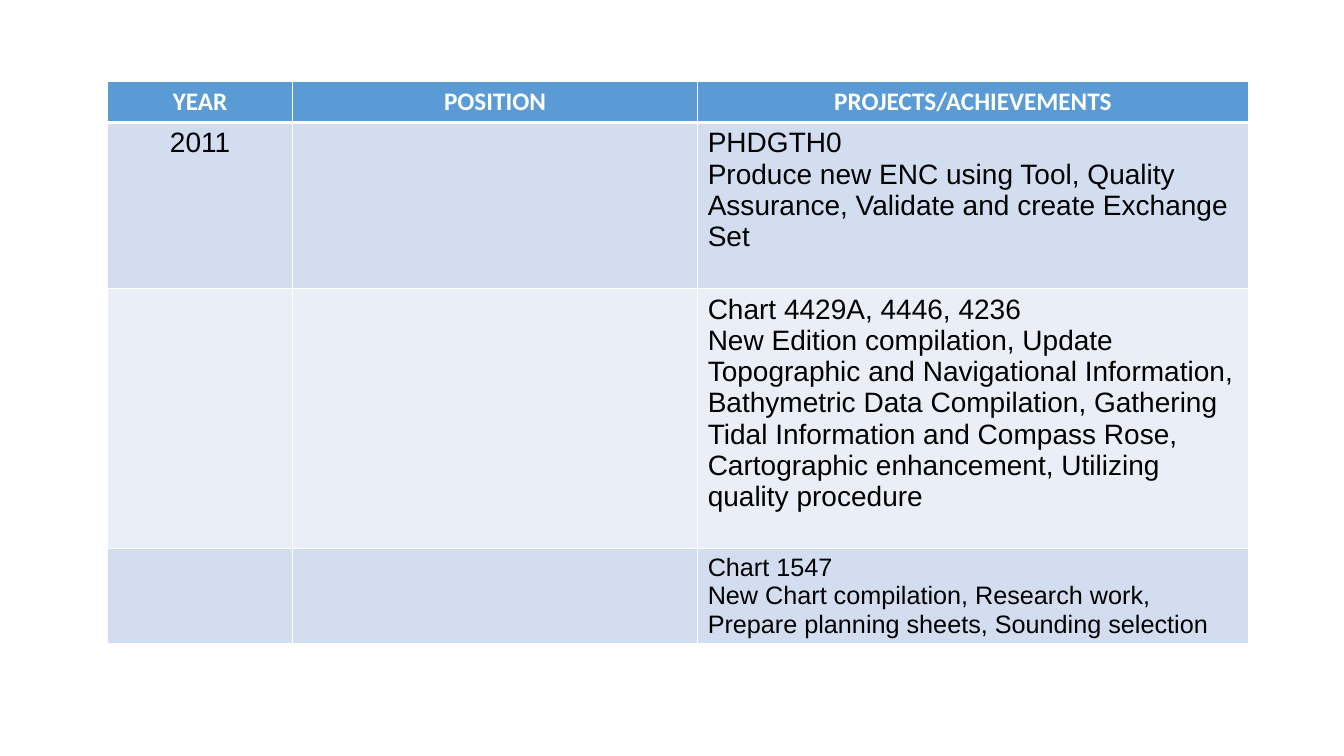
from lxml import etree
from pptx import Presentation
from pptx.dml.color import RGBColor
from pptx.enum.text import PP_ALIGN
from pptx.oxml.ns import qn
from pptx.util import Inches, Pt

CENTER, LEFT = PP_ALIGN.CENTER, PP_ALIGN.LEFT
WHITE, BLACK = "FFFFFF", "000000"
HEADER_BLUE, BAND_DARK, BAND_LIGHT = "5B9BD5", "D2DEEF", "EAEFF7"

COLUMN_WIDTHS = [1.83, 4.02, 5.46]
ROW_HEIGHTS = [0.4, 1.65, 2.58, 0.93]
TABLE_LEFT, TABLE_TOP = 1.07, 0.81

HISTORY = [
    [["YEAR"], ["POSITION"], ["PROJECTS/ACHIEVEMENTS"]],
    [["2011"], [], [
        "PHDGTH0",
        "Produce new ENC using Tool, Quality Assurance, Validate and create "
        "Exchange Set"]],
    [[], [], [
        "Chart 4429A, 4446, 4236",
        "New Edition compilation, Update Topographic and Navigational "
        "Information, Bathymetric Data Compilation, Gathering Tidal "
        "Information and Compass Rose, Cartographic enhancement, Utilizing "
        "quality procedure"]],
    [[], [], [
        "Chart 1547",
        "New Chart compilation, Research work, Prepare planning sheets, "
        "Sounding selection"]],
]
ROW_FILLS = [HEADER_BLUE, BAND_DARK, BAND_LIGHT, BAND_DARK]
ROW_SIZES = [18, 20, 20, 18]


def write(frame, lines, size, font="Arial", color=BLACK, bold=False, align=LEFT):
    for i, line in enumerate(lines):
        paragraph = frame.paragraphs[0] if i == 0 else frame.add_paragraph()
        paragraph.alignment = align
        run = paragraph.add_run()
        run.text = line
        run.font.name = font
        run.font.size = Pt(size)
        run.font.bold = bold
        run.font.color.rgb = RGBColor.from_string(color)


def paint(cell, fill, edge_widths):
    """Give the cell white edges, then its fill, in the order the schema asks."""
    properties = cell._tc.get_or_add_tcPr()
    for side, width in edge_widths.items():
        edge = etree.SubElement(properties, qn(f"a:ln{side}"), w=str(Pt(width)))
        solid = etree.SubElement(edge, qn("a:solidFill"))
        etree.SubElement(solid, qn("a:srgbClr"), val=WHITE)
    cell.fill.solid()
    cell.fill.fore_color.rgb = RGBColor.from_string(fill)


prs = Presentation()
prs.slide_width, prs.slide_height = Inches(13.33), Inches(7.5)
slide = prs.slides.add_slide(prs.slide_layouts[6])

career = slide.shapes.add_table(
    len(ROW_HEIGHTS), len(COLUMN_WIDTHS), Inches(TABLE_LEFT), Inches(TABLE_TOP),
    Inches(sum(COLUMN_WIDTHS)), Inches(sum(ROW_HEIGHTS))).table
career.horz_banding = False
for column, width in zip(career.columns, COLUMN_WIDTHS):
    column.width = Inches(width)
for row, height in zip(career.rows, ROW_HEIGHTS):
    row.height = Inches(height)

for r, entries in enumerate(HISTORY):
    is_header = r == 0
    edges = {"L": 1, "R": 1, "T": 3 if r == 1 else 1, "B": 3 if is_header else 1}
    for c, lines in enumerate(entries):
        cell = career.cell(r, c)
        paint(cell, ROW_FILLS[r], edges)
        write(cell.text_frame, lines, ROW_SIZES[r],
              font="Calibri" if is_header else "Arial",
              color=WHITE if is_header else BLACK,
              bold=is_header,
              align=CENTER if is_header or c == 0 else LEFT)

prs.save("out.pptx")
